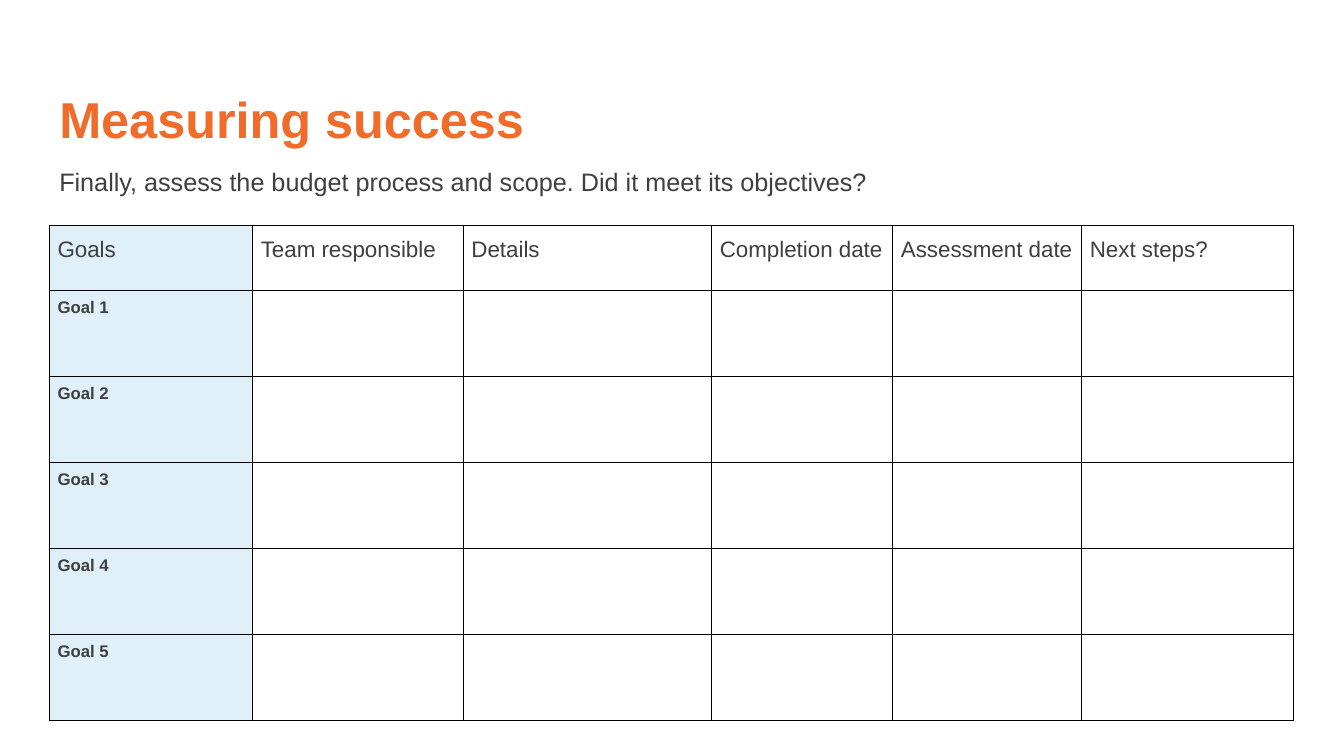
from dataclasses import dataclass

from lxml.etree import SubElement
from pptx import Presentation
from pptx.dml.color import RGBColor as Rgb
from pptx.enum.text import MSO_ANCHOR as Anchor
from pptx.oxml.ns import qn
from pptx.util import Pt

FONT = "Arial"
ORANGE, GRAY, BLUE, WHITE, BLACK = "F16B2B", "3F3F3F", "E0F0F9", "FFFFFF", "000000"
LEFT = 35.3
HEAD_H, GOAL_H = 46.6, 61.4
GOALS = 5


@dataclass
class Column:
    head: str
    width: float
    fill: str = WHITE
    foot: float = 7.2


@dataclass
class Label:
    text: str
    top: float
    height: float
    size: float
    color: str
    bold: bool
    space: float
    anchor: Anchor


COLUMNS = [
    Column("Goals", 145.2, BLUE, 17.3),
    Column("Team responsible", 150.5),
    Column("Details", 177.4),
    Column("Completion date", 129.4),
    Column("Assessment date", 135),
    Column("Next steps?", 151.4),
]
LABELS = [
    Label("Measuring success", 35.3, 104.4, 36, ORANGE, True, 0.9, Anchor.MIDDLE),
    Label("Finally, assess the budget process and scope. Did it meet its objectives?",
          116.6, 23, 18, GRAY, False, 0.95, Anchor.TOP),
]


def color(code: str) -> Rgb:
    return Rgb.from_string(code)


def write(frame, text: str, *, size: float, tint: str = GRAY,
          bold: bool = False, space: float = 1.0) -> None:
    para = frame.paragraphs[0]
    para.line_spacing = space
    run = para.add_run()
    run.text = text
    font = run.font
    font.name, font.size, font.bold = FONT, Pt(size), bold
    font.color.rgb = color(tint)


def add_label(slide, label: Label) -> None:
    box = slide.shapes.add_textbox(Pt(LEFT), Pt(label.top), Pt(828), Pt(label.height))
    frame = box.text_frame
    frame.word_wrap = True
    frame.vertical_anchor = label.anchor
    write(frame, label.text, size=label.size, tint=label.color,
          bold=label.bold, space=label.space)


def style(cell, fill: str, top: float, foot: float) -> None:
    props = cell._tc.get_or_add_tcPr()
    # Borders come before the fill in the cell properties
    for side in ("a:lnL", "a:lnR", "a:lnT", "a:lnB"):
        line = SubElement(props, qn(side), w=str(Pt(0.75)))
        paint = SubElement(line, qn("a:solidFill"))
        SubElement(paint, qn("a:srgbClr"), val=BLACK)
    cell.fill.solid()
    cell.fill.fore_color.rgb = color(fill)
    cell.margin_left = cell.margin_right = Pt(5.8)
    cell.margin_top, cell.margin_bottom = Pt(top), Pt(foot)


def add_grid(slide) -> None:
    width = sum(col.width for col in COLUMNS)
    height = HEAD_H + GOALS * GOAL_H
    table = slide.shapes.add_table(GOALS + 1, len(COLUMNS), Pt(LEFT), Pt(160.8),
                                   Pt(width), Pt(height)).table
    table.horz_banding = False
    for row in range(GOALS + 1):
        table.rows[row].height = Pt(GOAL_H if row else HEAD_H)
    for index, col in enumerate(COLUMNS):
        table.columns[index].width = Pt(col.width)
        head = table.cell(0, index)
        style(head, col.fill, 8.6, col.foot)
        write(head.text_frame, col.head, size=16)
        for row in range(1, GOALS + 1):
            cell = table.cell(row, index)
            style(cell, col.fill, 5.8, 5.8)
            if index == 0:
                write(cell.text_frame, f"Goal {row}", size=12, bold=True)


def main() -> None:
    deck = Presentation()
    deck.slide_width, deck.slide_height = Pt(960), Pt(540)
    slide = deck.slides.add_slide(deck.slide_layouts[6])
    # Title and question
    for label in LABELS:
        add_label(slide, label)
    # Goal table
    add_grid(slide)
    deck.save("out.pptx")


if __name__ == "__main__":
    main()
